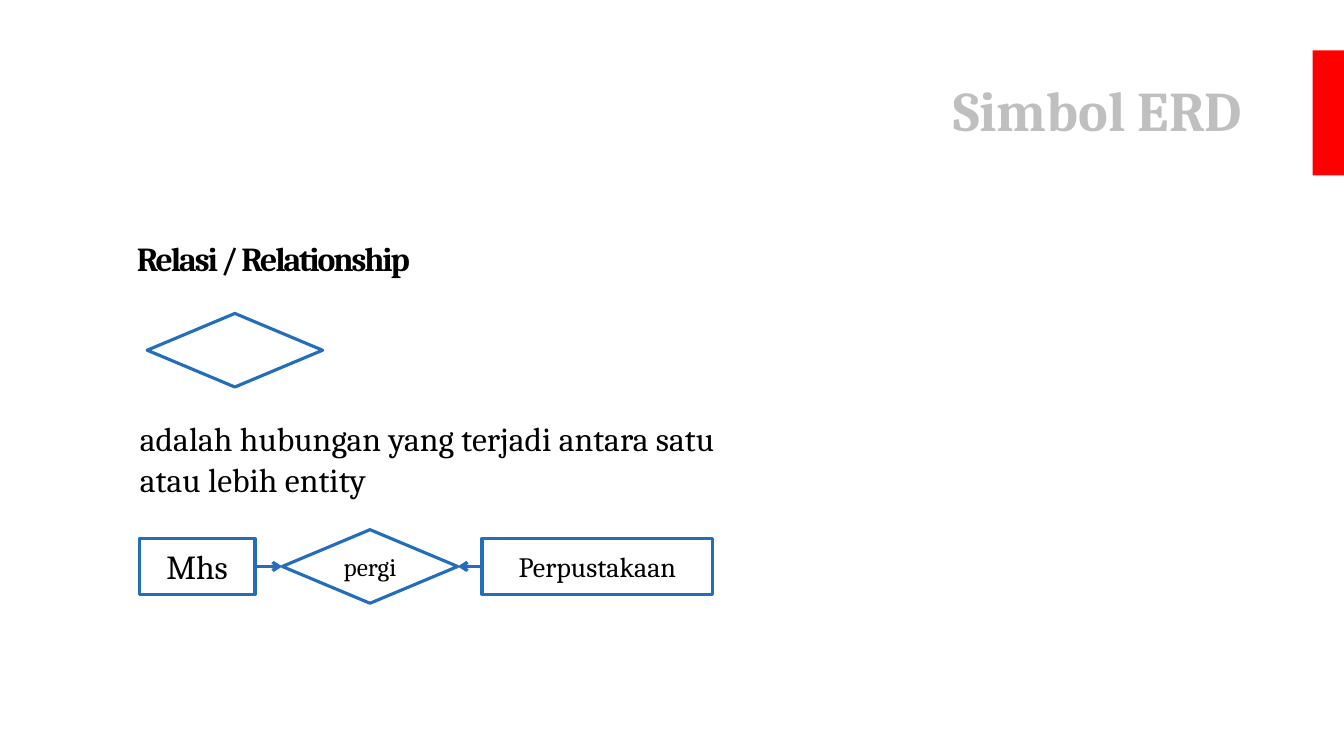
from pptx import Presentation
from pptx.dml.color import RGBColor
from pptx.enum import shapes, text
from pptx.oxml.ns import qn
from pptx.util import Inches, Pt
from lxml import etree

COLORS = {"title": "BFBFBF", "accent": "FF0000", "outline": "236DBB", "body": "000000"}
FONT = "Cambria"
OUTLINE_WIDTH = Pt(2.25)
RECTANGLE = shapes.MSO_SHAPE.RECTANGLE
DIAMOND = shapes.MSO_SHAPE.DIAMOND
DIAMOND_SIZE = (1.74, 0.73)
FLOW_Y = 5.62


def rgb(name):
    return RGBColor.from_string(COLORS[name])


def write(frame, content, size=24, color="body", bold=False, align=text.PP_ALIGN.LEFT,
          anchor=text.MSO_ANCHOR.TOP, line_spacing=None, tracking=None):
    """Fill a text frame with one formatted paragraph; tracking is in points."""
    frame.word_wrap = True
    frame.vertical_anchor = anchor
    paragraph = frame.paragraphs[0]
    paragraph.alignment = align
    if line_spacing:
        paragraph.line_spacing = line_spacing
    run = paragraph.add_run()
    run.text = content
    run.font.name = FONT
    run.font.size = Pt(size)
    run.font.bold = bold
    run.font.color.rgb = rgb(color)
    if tracking:
        run._r.get_or_add_rPr().set("spc", str(int(tracking * 100)))


def add_title(slide, content):
    title = slide.shapes.title
    title.left, title.top = Inches(0.92), Inches(0.4)
    title.width, title.height = Inches(11.5), Inches(1.45)
    write(title.text_frame, content, size=40, color="title", bold=True,
          align=text.PP_ALIGN.RIGHT, anchor=text.MSO_ANCHOR.MIDDLE, line_spacing=0.9)


def add_text(slide, content, left, top, width, height, **text_format):
    box = slide.shapes.add_textbox(Inches(left), Inches(top), Inches(width), Inches(height))
    write(box.text_frame, content, **text_format)
    box.text_frame.auto_size = text.MSO_AUTO_SIZE.SHAPE_TO_FIT_TEXT


def add_accent(slide):
    accent = slide.shapes.add_shape(RECTANGLE, Inches(13.02), Inches(0.5),
                                    Inches(0.64), Inches(1.24))
    accent.shadow.inherit = False
    accent.fill.solid()
    accent.fill.fore_color.rgb = rgb("accent")
    accent.line.fill.background()


def add_symbol(slide, kind, left, top, width, height, label=None, size=24):
    symbol = slide.shapes.add_shape(kind, Inches(left), Inches(top),
                                    Inches(width), Inches(height))
    symbol.shadow.inherit = False
    symbol.fill.background()
    symbol.line.color.rgb = rgb("outline")
    symbol.line.width = OUTLINE_WIDTH
    if label:
        write(symbol.text_frame, label, size=size, align=text.PP_ALIGN.CENTER,
              anchor=text.MSO_ANCHOR.MIDDLE)


def add_arrow(slide, start_x, end_x, y):
    arrow = slide.shapes.add_connector(shapes.MSO_CONNECTOR.STRAIGHT, Inches(start_x),
                                       Inches(y), Inches(end_x), Inches(y))
    arrow.line.color.rgb = rgb("outline")
    arrow.line.width = OUTLINE_WIDTH
    properties = arrow._element.spPr
    etree.SubElement(properties.find(qn("a:ln")), qn("a:tailEnd"), type="arrow")
    etree.SubElement(properties, qn("a:effectLst"))


def main():
    deck = Presentation()
    deck.slide_width, deck.slide_height = Inches(13.33), Inches(7.5)
    slide = deck.slides.add_slide(deck.slide_layouts[5])

    add_title(slide, "Simbol ERD")
    add_accent(slide)
    add_text(slide, "Relasi / Relationship", 1.26, 2.31, 3.52, 0.5, bold=True, tracking=-1.5)
    add_text(slide, "adalah hubungan yang terjadi antara satu atau lebih entity",
             1.29, 4.1, 5.97, 0.91)
    add_symbol(slide, DIAMOND, 1.46, 3.11, *DIAMOND_SIZE)

    for kind, label, left, (width, height), size in (
        (RECTANGLE, "Mhs", 1.38, (1.15, 0.55), 24),
        (DIAMOND, "pergi", 2.8, DIAMOND_SIZE, 18),
        (RECTANGLE, "Perpustakaan", 4.78, (2.29, 0.55), 20),
    ):
        add_symbol(slide, kind, left, FLOW_Y - height / 2, width, height, label, size)
    for start_x, end_x in ((2.53, 2.8), (4.78, 4.54)):
        add_arrow(slide, start_x, end_x, FLOW_Y)

    deck.save("out.pptx")


if __name__ == "__main__":
    main()
